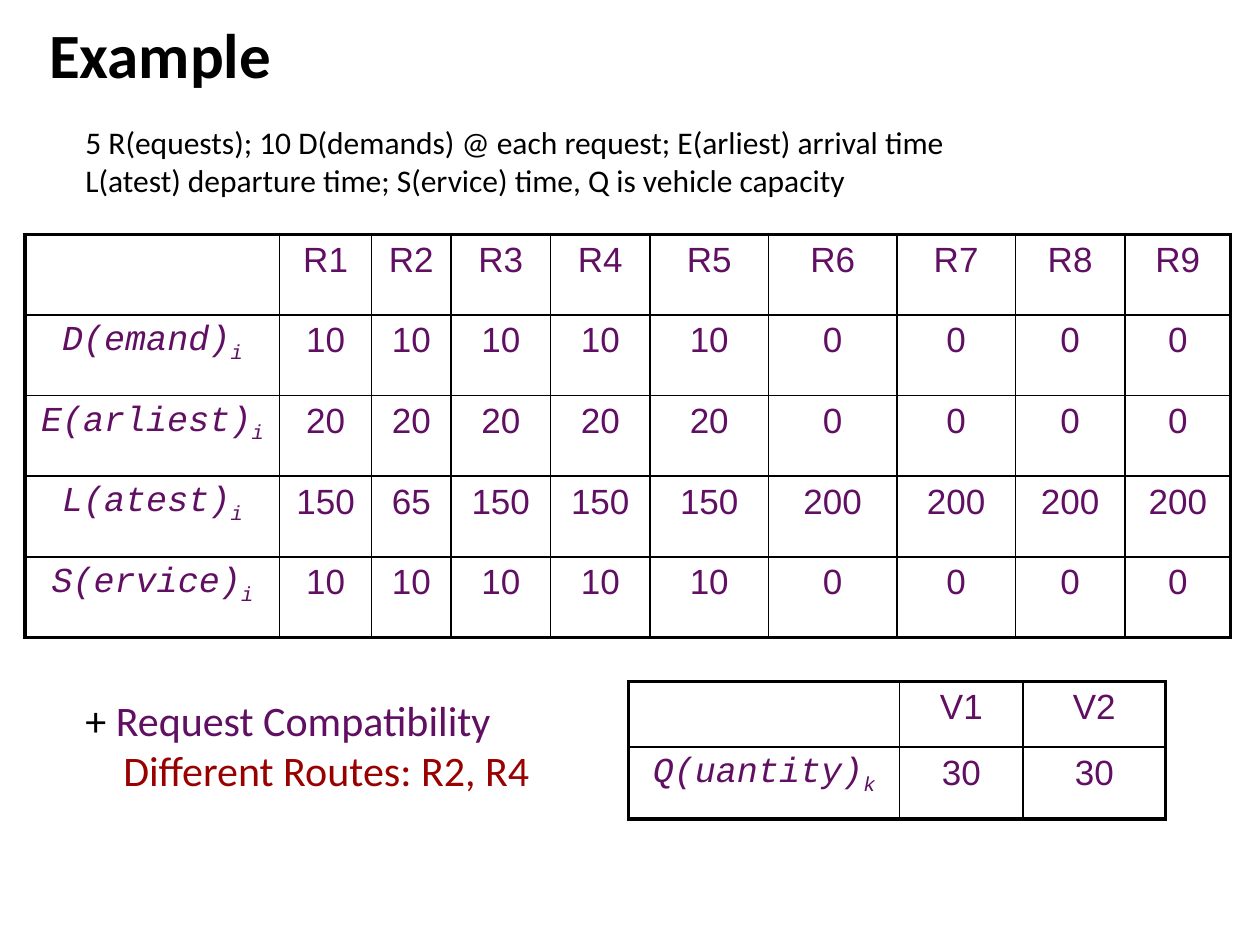
from dataclasses import dataclass

from lxml import etree
from pptx import Presentation
from pptx import util as u
from pptx.dml.color import RGBColor
from pptx.enum import text
from pptx.oxml import ns


@dataclass(frozen=True)
class Theme:
    black: str = "000000"
    purple: str = "610F63"
    red: str = "990000"
    body_font: str = "Calibri"
    cell_font: str = "Arial"
    label_font: str = "Courier New"
    title_size: int = 36
    note_size: int = 18
    cell_size: int = 20
    rule_size: int = 24
    outer_line: float = 2.25
    inner_line: float = 1


theme = Theme()


def add_run(p, words, font, size, color):
    r = p.add_run()
    r.text = words
    r.font.name = font
    r.font.size = u.Pt(size)
    r.font.color.rgb = RGBColor.from_string(color)
    return r


def add_border(cell, side, width):
    ln = etree.SubElement(cell._tc.get_or_add_tcPr(), ns.qn(f"a:ln{side}"), w=str(u.Pt(width)))
    fill = etree.SubElement(ln, ns.qn("a:solidFill"))
    etree.SubElement(fill, ns.qn("a:srgbClr"), val=theme.black)


prs = Presentation()
prs.slide_width, prs.slide_height = u.Inches(10), u.Inches(7.5)
s = prs.slides.add_slide(prs.slide_layouts[5])

title = s.shapes.title
title.left, title.top = u.Inches(0.39), u.Inches(0.11)
title.width, title.height = u.Inches(7.68), u.Inches(0.63)
tf = title.text_frame
tf.margin_left = tf.margin_top = tf.margin_right = tf.margin_bottom = 0
tf.auto_size = text.MSO_AUTO_SIZE.NONE
tf.vertical_anchor = text.MSO_ANCHOR.MIDDLE
p = tf.paragraphs[0]
p.alignment = text.PP_ALIGN.LEFT
add_run(p, "Example", theme.body_font, theme.title_size, theme.black).font.bold = True

requests = [
    ("", "", [f"R{n}" for n in range(1, 10)]),
    ("D(emand)", "i", [10] * 5 + [0] * 4),
    ("E(arliest)", "i", [20] * 5 + [0] * 4),
    ("L(atest)", "i", [150, 65] + [150] * 3 + [200] * 4),
    ("S(ervice)", "i", [10] * 5 + [0] * 4),
]
vehicles = [("", "", ["V1", "V2"]), ("Q(uantity)", "k", [30, 30])]
request_widths = [2.02, 0.73, 0.63, 0.79, 0.79, 0.94, 1.02, 0.94, 0.87, 0.84]
tables = [
    (0.2, 1.86, request_widths, [0.64] * 5, requests),
    (4.99, 5.41, [2.15, 0.98, 1.13], [0.52, 0.57], vehicles),
]

for left, top, widths, heights, rows in tables:
    frame = s.shapes.add_table(len(heights), len(widths), u.Inches(left), u.Inches(top),
                               u.Inches(sum(widths)), u.Inches(sum(heights)))
    table = frame.table
    table.first_row = table.horz_banding = False
    for column, width in zip(table.columns, widths):
        column.width = u.Inches(width)
    for row, height in zip(table.rows, heights):
        row.height = u.Inches(height)
    for i, (label, index, values) in enumerate(rows):
        for j, value in enumerate([label, *values]):
            cell = table.cell(i, j)
            edges = {"L": j == 0, "R": j == len(widths) - 1,
                     "T": i == 0, "B": i == len(heights) - 1}
            for side, outer in edges.items():
                add_border(cell, side, theme.outer_line if outer else theme.inner_line)
            cell.fill.background()
            if value == "":
                continue
            p = cell.text_frame.paragraphs[0]
            p.alignment = text.PP_ALIGN.CENTER
            font = theme.cell_font if j else theme.label_font
            r = add_run(p, str(value), font, theme.cell_size, theme.purple)
            if j == 0:
                r.font.italic = True
                sub = add_run(p, index, font, theme.cell_size, theme.purple)
                sub.font.italic = True
                sub.font._element.set("baseline", "-25000")

notes = [
    (0.58, 5.46, 4.02, 0.91, theme.rule_size, [
        (0, [("+ ", theme.black), ("Request Compatibility", theme.purple)]),
        (0.3, [("Different Routes: R2, R4", theme.red)]),
    ]),
    (0.58, 0.93, 7.56, 1.01, theme.note_size, [
        (0, [("5 R(equests); 10 D(demands) @ each request; E(arliest) arrival time", theme.black)]),
        (0, [("L(atest) departure time; S(ervice) time, Q is vehicle capacity", theme.black)]),
    ]),
]

for left, top, width, height, size, lines in notes:
    sp = s.shapes.add_textbox(u.Inches(left), u.Inches(top), u.Inches(width), u.Inches(height))
    tf = sp.text_frame
    tf.word_wrap = True
    tf.auto_size = text.MSO_AUTO_SIZE.SHAPE_TO_FIT_TEXT
    for n, (indent, runs) in enumerate(lines):
        p = tf.add_paragraph() if n else tf.paragraphs[0]
        if indent:
            p._p.get_or_add_pPr().set("marL", str(u.Inches(indent)))
        for words, color in runs:
            add_run(p, words, theme.body_font, size, color)

prs.save("out.pptx")
